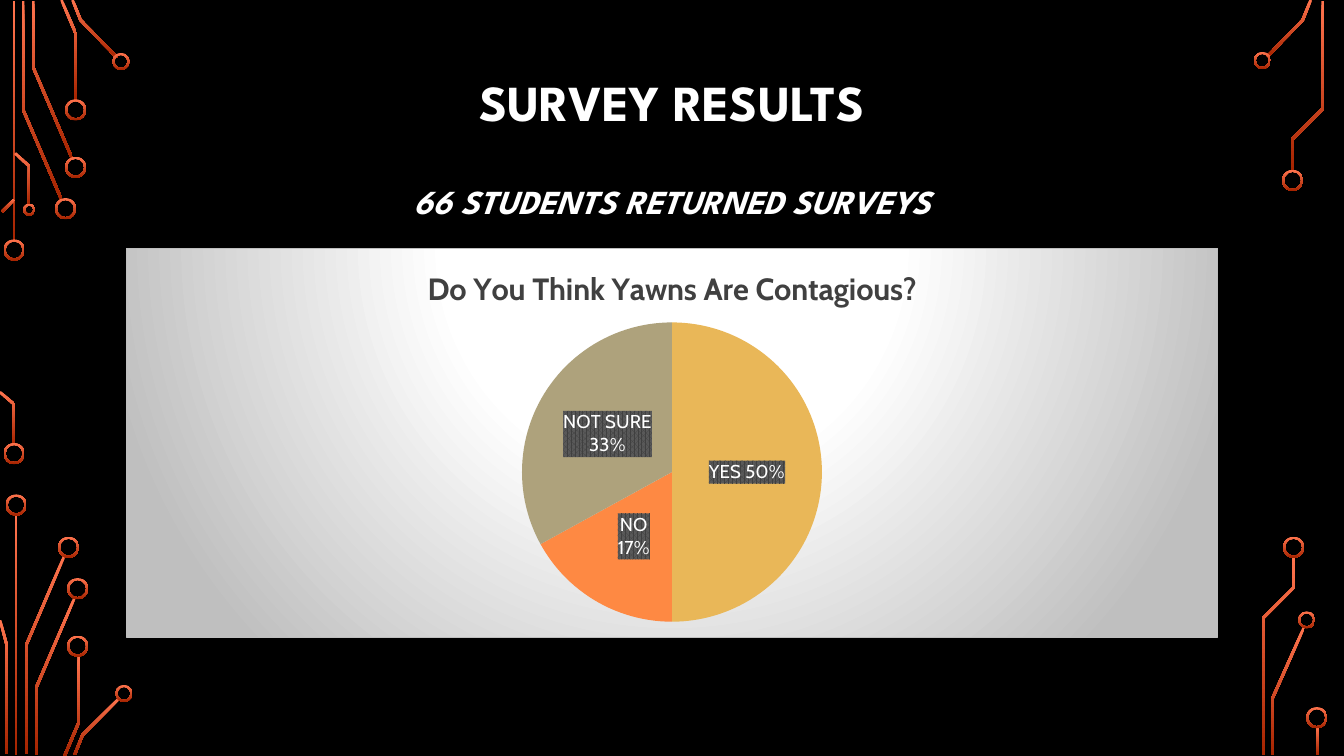
from dataclasses import dataclass

from lxml.etree import fromstring
from pptx import Presentation
from pptx.chart.data import CategoryChartData as ChartData
from pptx.dml.color import RGBColor as Rgb
from pptx.enum.chart import XL_CHART_TYPE as ChartType, XL_LABEL_POSITION as LabelPosition
from pptx.enum.shapes import MSO_SHAPE as Preset
from pptx.enum.text import MSO_ANCHOR as Anchor, MSO_AUTO_SIZE as AutoSize, PP_ALIGN as Align
from pptx.oxml.ns import nsdecls, qn
from pptx.util import Inches, Pt


@dataclass(frozen=True)
class Theme:
    """Colours, fonts and type sizes of the slide."""
    black: str = "000000"
    white: str = "FFFFFF"
    grey: str = "BFBFBF"
    chart_title: str = "404040"
    label_dark: str = "404040"
    label_light: str = "595959"
    circuit: tuple = ("FF744E", "A62400")
    slices: tuple = ("E9B758", "FE8943", "AEA27C", "90B46E")
    heading_font: str = "League Spartan"
    chart_font: str = "Cabin"
    heading_size: float = 36
    subheading_size: float = 24
    chart_title_size: float = 22
    label_size: float = 13.3
    chart_size: float = 10


THEME = Theme()
WIDTH, HEIGHT = Inches(13.33), Inches(7.5)
DIVISIONS = 32
TRACE_WIDTH = 0.026
RING_BAND = 0.02

TRACES = [
    [(0.14, 0.01), (0.14, 2.4)],
    [(0.23, 0.01), (0.23, 1.09), (0.61, 1.98)],
    [(0.33, 0.01), (0.33, 0.67), (0.71, 1.56)],
    [(0.61, 0), (0.75, 0.33), (0.75, 1)],
    [(0.72, 0), (0.8, 0.2), (1.16, 0.57)],
    [(0.02, 2.1), (0.14, 1.98)],
    [(0, 3.89), (0.14, 4.01), (0.14, 4.41)],
    [(0.15, 1.52), (0.29, 1.65), (0.29, 2.03)],
    [(0.16, 5.1), (0.16, 7.49)],
    [(0.26, 7.48), (0.26, 6.4), (0.64, 5.51)],
    [(0, 6.15), (0.07, 6.41), (0.07, 7.48)],
    [(0.36, 7.49), (0.36, 6.82), (0.74, 5.93)],
    [(0.64, 7.5), (0.78, 7.17), (0.78, 6.5)],
    [(0.74, 7.49), (0.82, 7.29), (1.18, 6.93)],
    [(12.57, 0.56), (12.92, 0.2), (13, 0)],
    [(12.62, 7.49), (12.62, 6.93), (12.93, 6.23)],
    [(12.82, 1.69), (12.82, 1.38), (13.12, 1.08), (13.12, 0.01)],
    [(12.53, 7.49), (12.53, 6.13), (12.83, 5.83), (12.83, 5.52)],
    [(13.07, 7.21), (13.07, 7.49)],
]
RINGS = {
    0.21: [(0.14, 2.48), (0.14, 4.5), (0.65, 2.07), (0.75, 1.66), (0.75, 1.09),
           (0.16, 5.01), (0.68, 5.43), (0.77, 5.84), (0.77, 6.41),
           (12.82, 1.79), (12.83, 5.43), (13.06, 7.12)],
    0.17: [(1.2, 0.61), (1.23, 6.88), (12.52, 0.6), (12.96, 6.15)],
    0.12: [(0.29, 2.08)],
}
ANSWERS = [("YES 50%", 50), ("NO\n17%", 17), ("NOT SURE\n33%", 33), (None, None)]


def grid(column, row, columns, rows):
    """Return left, top, width and height of a grid area."""
    return (round(WIDTH * column / DIVISIONS), round(HEIGHT * row / DIVISIONS),
            round(WIDTH * columns / DIVISIONS), round(HEIGHT * rows / DIVISIONS))


def style_font(font, *, name, size, color, bold=False, italic=False):
    """Set the face, size, colour and weight of a font."""
    font.name, font.size, font.bold, font.italic = name, Pt(size), bold, italic
    font.color.rgb = Rgb.from_string(color)


def write(para, text, **font_format):
    """Write formatted text as one span of a paragraph."""
    span = para.add_run()
    span.text = text
    style_font(span.font, **font_format)


def paint_circuit(shape):
    """Fill a circuit part with the vertical gradient."""
    shape.shadow.inherit = False
    shape.line.fill.background()
    shape.fill.gradient()
    shape.fill.gradient_angle = 270
    for stop, color in zip(shape.fill.gradient_stops, THEME.circuit):
        stop.color.rgb = Rgb.from_string(color)


def ribbon(points):
    """Return the mitred outline around a centre line."""
    line = [complex(*point) for point in points]
    normals = [(end - start) / abs(end - start) * 1j for start, end in zip(line, line[1:])]
    offsets = []
    for before, after in zip(normals[:1] + normals, normals + normals[-1:]):
        cosine = (before * after.conjugate()).real
        offsets.append((before + after) / (1 + cosine) * TRACE_WIDTH / 2)
    one_side = [point + offset for point, offset in zip(line, offsets)]
    other_side = [point - offset for point, offset in zip(line, offsets)]
    return [(Inches(p.real), Inches(p.imag)) for p in one_side + other_side[::-1]]


def add_trace(slide, points):
    """Draw one circuit trace."""
    start, *rest = ribbon(points)
    builder = slide.shapes.build_freeform(*start)
    builder.add_line_segments(rest, close=True)
    paint_circuit(builder.convert_to_shape())


def add_ring(slide, center, diameter):
    """Draw one circuit terminal."""
    left, top = (Inches(value - diameter / 2) for value in center)
    ring = slide.shapes.add_shape(Preset.DONUT, left, top, Inches(diameter), Inches(diameter))
    ring.adjustments[0] = RING_BAND / diameter
    paint_circuit(ring)


def add_heading(slide):
    """Fill the title placeholder with the heading and its second line."""
    box = slide.shapes.title
    box.left, box.top, box.width, box.height = grid(3, 2.9, 26, 6.9)
    frame = box.text_frame
    frame.word_wrap, frame.auto_size = True, AutoSize.NONE
    frame.vertical_anchor = Anchor.MIDDLE
    heading, subheading = frame.paragraphs[0], frame.add_paragraph()
    for para in (heading, subheading):
        para.alignment, para.line_spacing = Align.CENTER, 0.9
    subheading.space_before = Pt(38)
    shared = dict(name=THEME.heading_font, color=THEME.white, bold=True)
    write(heading, "SURVEY RESULTS", size=THEME.heading_size, **shared)
    write(subheading, "66 STUDENTS RETURNED SURVEYS",
          size=THEME.subheading_size, italic=True, **shared)


def solid(color):
    """Return the XML of a plain colour."""
    return f'<a:srgbClr val="{color}"/>'


def chart_properties(content):
    """Build chart shape properties around a fill."""
    return fromstring(f'<c:spPr {nsdecls("c", "a")}>{content}</c:spPr>')


def style_backdrop(chart):
    """Give the chart area its radial gradient and border."""
    stops = "".join(f'<a:gs pos="{position}">{solid(color)}</a:gs>' for position, color in
                    ((0, THEME.white), (39000, THEME.white), (100000, THEME.grey)))
    backdrop = chart_properties(
        f'<a:gradFill><a:gsLst>{stops}</a:gsLst><a:path path="circle">'
        '<a:fillToRect l="50000" t="-80000" r="50000" b="180000"/></a:path></a:gradFill>'
        f'<a:ln w="9525"><a:solidFill>{solid(THEME.grey)}</a:solidFill></a:ln>')
    chart.element.find(qn("c:chart")).addnext(backdrop)


def place_pie(chart):
    """Set the inner plot area as shares of the chart."""
    places = "".join(f'<c:{name} val="{value}"/>' for name, value in
                     (("layoutTarget", "inner"), ("xMode", "edge"), ("yMode", "edge"),
                      ("x", 0.36), ("y", 0.19), ("w", 0.28), ("h", 0.77)))
    plot_area = chart.element.find(".//" + qn("c:plotArea"))
    for layout in plot_area.findall(qn("c:layout")):
        plot_area.remove(layout)
    plot_area.insert(0, fromstring(
        f'<c:layout {nsdecls("c")}><c:manualLayout>{places}</c:manualLayout></c:layout>'))


def label_slice(point, text):
    """Put a patterned label in the middle of a slice."""
    label = point.data_label
    frame = label.text_frame
    for index, line in enumerate(text.split("\n")):
        para = frame.add_paragraph() if index else frame.paragraphs[0]
        write(para, line, name=THEME.chart_font, size=THEME.label_size, color=THEME.white)
    label.position = LabelPosition.CENTER
    rich = frame._txBody
    rich.getparent().addnext(chart_properties(
        f'<a:pattFill prst="pct75"><a:fgClr>{solid(THEME.label_dark)}</a:fgClr>'
        f'<a:bgClr>{solid(THEME.label_light)}</a:bgClr></a:pattFill>'))


def add_survey_chart(slide):
    """Draw the pie of answers."""
    data = ChartData()
    data.categories = [str(number + 1) for number in range(len(ANSWERS))]
    data.add_series("Series 1", [value for _, value in ANSWERS])
    chart = slide.shapes.add_chart(ChartType.PIE, *grid(3, 10.5, 26, 16.5), data).chart
    style_font(chart.font, name=THEME.chart_font, size=THEME.chart_size, color=THEME.white)
    chart.has_legend = False
    write(chart.chart_title.text_frame.paragraphs[0], "Do You Think Yawns Are Contagious?",
          name=THEME.chart_font, size=THEME.chart_title_size,
          color=THEME.chart_title, bold=True)
    pie = chart.plots[0]
    pie.vary_by_categories = True
    for index, ((text, _), color) in enumerate(zip(ANSWERS, THEME.slices)):
        point = pie.series[0].points[index]
        point.format.fill.solid()
        point.format.fill.fore_color.rgb = Rgb.from_string(color)
        point.format.line.fill.background()
        if text:
            label_slice(point, text)
    style_backdrop(chart)
    place_pie(chart)


def main():
    """Build the slide and save the deck."""
    deck = Presentation()
    deck.slide_width, deck.slide_height = WIDTH, HEIGHT
    page = deck.slides.add_slide(deck.slide_layouts.get_by_name("Title Only"))
    page.background.fill.solid()
    page.background.fill.fore_color.rgb = Rgb.from_string(THEME.black)
    for points in TRACES:
        add_trace(page, points)
    for diameter, centers in RINGS.items():
        for center in centers:
            add_ring(page, center, diameter)
    add_heading(page)
    add_survey_chart(page)
    deck.save("out.pptx")


if __name__ == "__main__":
    main()
